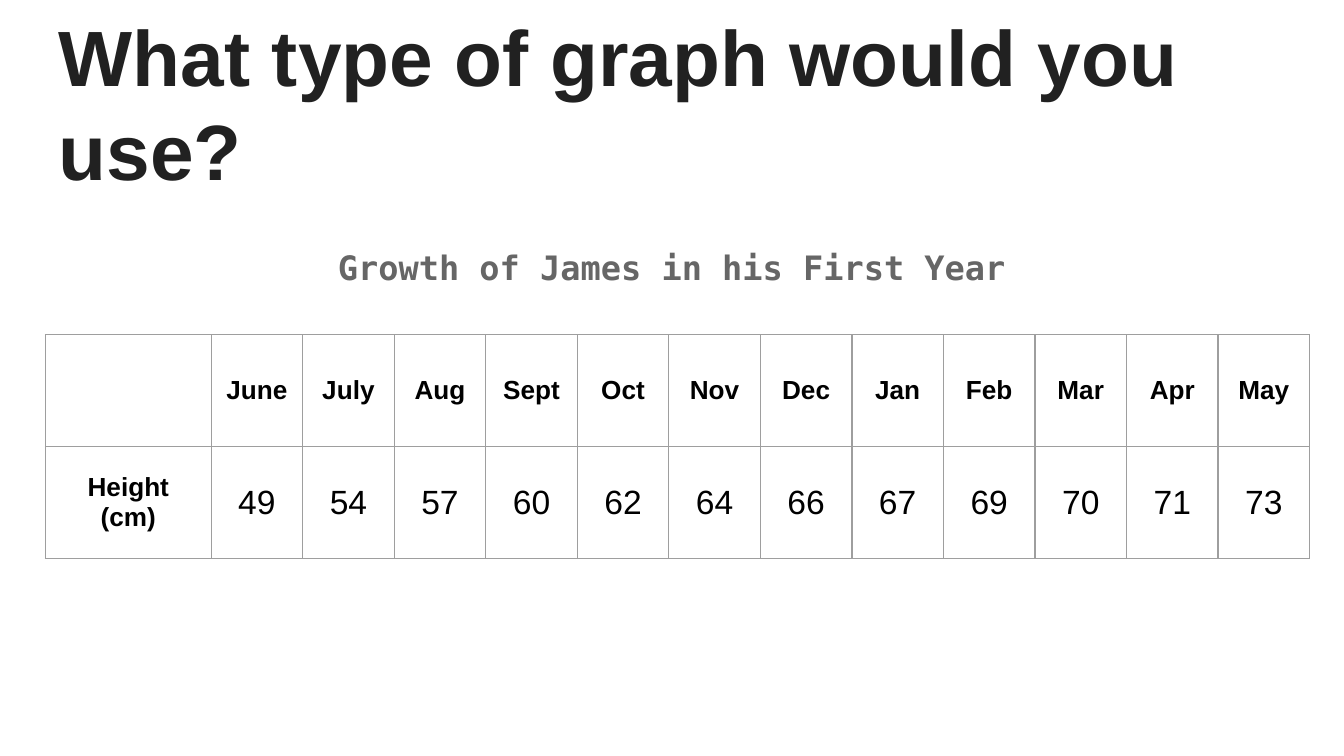
import pptx
import pptx.dml.color
import pptx.enum.text
import pptx.oxml
import pptx.oxml.ns
import pptx.util

Cm = pptx.util.Cm
Pt = pptx.util.Pt
RGBColor = pptx.dml.color.RGBColor
ALIGN = pptx.enum.text.PP_ALIGN
ANCHOR = pptx.enum.text.MSO_ANCHOR

INK = RGBColor(0x21, 0x21, 0x21)
GREY = RGBColor(0x66, 0x66, 0x66)
BLACK = RGBColor(0x00, 0x00, 0x00)
BORDER = RGBColor(0x9E, 0x9E, 0x9E)

MARGIN = Cm(0.25)
LEFT = Cm(0.86)
WIDTH = Cm(23.67)


def write(frame, text, size=18, font="Arial", color=BLACK, bold=True,
          align=ALIGN.CENTER, spacing=1.0):
    para = frame.paragraphs[0]
    para.alignment = align
    para.line_spacing = spacing
    span = para.add_run()
    span.text = text
    span.font.size = Pt(size)
    span.font.name = font
    span.font.bold = bold
    span.font.color.rgb = color


def set_margins(holder):
    holder.margin_left = holder.margin_right = MARGIN
    holder.margin_top = holder.margin_bottom = MARGIN


deck = pptx.Presentation()
deck.slide_width = Cm(25.4)
deck.slide_height = Cm(14.29)
page = deck.slides.add_slide(deck.slide_layouts[6])

title_box = page.shapes.add_textbox(LEFT, Cm(0.81), WIDTH, Cm(2.24))
title_frame = title_box.text_frame
title_frame.word_wrap = True
title_frame.vertical_anchor = ANCHOR.MIDDLE
set_margins(title_frame)
write(title_frame, "What type of graph would you use?", size=42, color=INK,
      align=ALIGN.LEFT)

caption_box = page.shapes.add_textbox(LEFT, Cm(3.4), WIDTH, Cm(9.27))
caption_frame = caption_box.text_frame
caption_frame.word_wrap = True
set_margins(caption_frame)
caption_frame.margin_top = Cm(1.67)
write(caption_frame, "Growth of James in his First Year",
      font="DejaVu Sans Mono", color=GREY, spacing=1.15)

months = ["June", "July", "Aug", "Sept", "Oct", "Nov",
          "Dec", "Jan", "Feb", "Mar", "Apr", "May"]
heights = [49, 54, 57, 60, 62, 64, 66, 67, 69, 70, 71, 73]
rows = [[""] + months, ["Height (cm)"] + heights]

label_width, month_width, row_height = Cm(3.13), Cm(1.73), Cm(2.11)
table = page.shapes.add_table(
    len(rows), len(rows[0]), LEFT, Cm(6.33),
    label_width + month_width * len(months), row_height * len(rows)).table
table.first_row = False
table.horz_banding = False
for index, column in enumerate(table.columns):
    column.width = month_width if index else label_width

for row_index, values in enumerate(rows):
    table.rows[row_index].height = row_height
    for column_index, value in enumerate(values):
        cell = table.cell(row_index, column_index)
        cell.vertical_anchor = ANCHOR.MIDDLE
        set_margins(cell)
        properties = cell._tc.get_or_add_tcPr()
        for side in ("lnL", "lnR", "lnT", "lnB"):
            properties.append(pptx.oxml.parse_xml(
                f'<a:{side} {pptx.oxml.ns.nsdecls("a")} w="{Pt(0.75)}">'
                f'<a:solidFill><a:srgbClr val="{BORDER}"/></a:solidFill>'
                f'</a:{side}>'))
        cell.fill.background()
        if value:
            is_header = isinstance(value, str)
            write(cell.text_frame, str(value), size=14 if is_header else 18,
                  bold=is_header)

deck.save("out.pptx")
